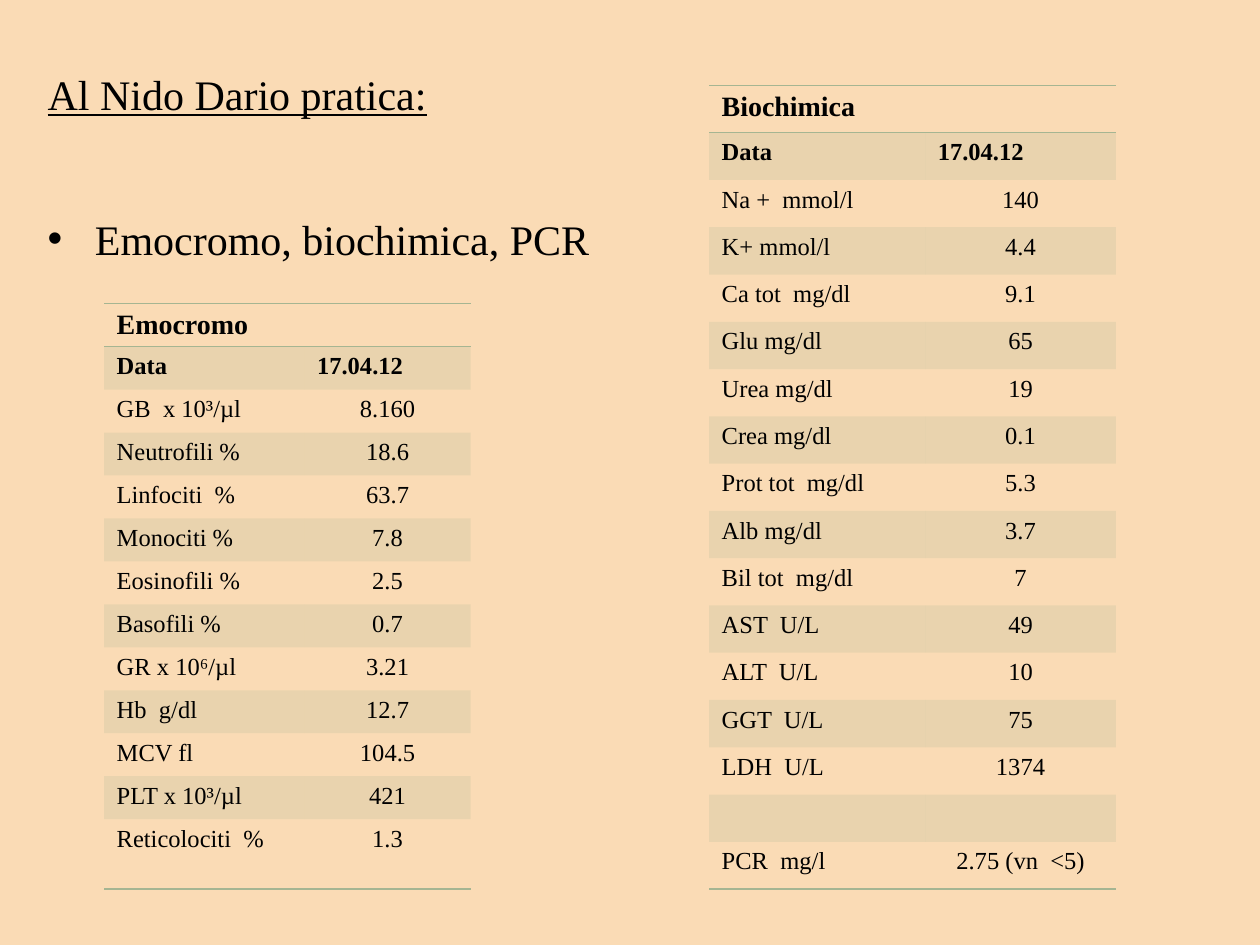
from lxml.etree import SubElement
from pptx import Presentation
from pptx.dml.color import RGBColor
from pptx.enum.text import MSO_ANCHOR, MSO_AUTO_SIZE, PP_ALIGN
from pptx.oxml.ns import qn
from pptx.util import Pt

COLORS = {"background": "FADBB5", "text": "000000", "sage": "A5B592"}
FONT = "Times New Roman"
NO_STYLE = "{2D5ABB26-0587-4C30-8999-92F81FD0307C}"
BAND_ALPHA = "20000"

EMOCROMO = [
    ("Data", "17.04.12"),
    ("GB  x 10³/µl", "8.160"),
    ("Neutrofili %", "18.6"),
    ("Linfociti  %", "63.7"),
    ("Monociti %", "7.8"),
    ("Eosinofili %", "2.5"),
    ("Basofili %", "0.7"),
    ("GR x 10⁶/µl", "3.21"),
    ("Hb  g/dl", "12.7"),
    ("MCV fl", "104.5"),
    ("PLT x 10³/µl", "421"),
    ("Reticolociti  %", "1.3"),
]
BIOCHIMICA = [
    ("Data", "17.04.12"),
    ("Na +  mmol/l", "140"),
    ("K+ mmol/l", "4.4"),
    ("Ca tot  mg/dl", "9.1"),
    ("Glu mg/dl", "65"),
    ("Urea mg/dl", "19"),
    ("Crea mg/dl", "0.1"),
    ("Prot tot  mg/dl", "5.3"),
    ("Alb mg/dl", "3.7"),
    ("Bil tot  mg/dl", "7"),
    ("AST  U/L", "49"),
    ("ALT  U/L", "10"),
    ("GGT  U/L", "75"),
    ("LDH  U/L", "1374"),
    ("", ""),
    ("PCR  mg/l", "2.75 (vn  <5)"),
]


def rgb(name):
    return RGBColor.from_string(COLORS[name])


def style_font(paragraph, size, bold=False, underline=False):
    font = paragraph.font
    font.name, font.size = FONT, Pt(size)
    font.bold, font.underline = bold, underline
    font.color.rgb = rgb("text")


def set_rules(cell, *sides):
    properties = cell._tc.get_or_add_tcPr()
    for side in sides:
        rule = SubElement(properties, qn(f"a:{side}"), w=str(Pt(1)))
        fill = SubElement(rule, qn("a:solidFill"))
        SubElement(fill, qn("a:srgbClr"), val=COLORS["sage"])


def fill_cell(cell, banded):
    if not banded:
        cell.fill.background()
        return
    cell.fill.solid()
    cell.fill.fore_color.rgb = rgb("sage")
    tint = cell._tc.tcPr.find(".//" + qn("a:solidFill") + "/" + qn("a:srgbClr"))
    SubElement(tint, qn("a:alpha"), val=BAND_ALPHA)


def write_cell(cell, text, size, bold=False, centered=False):
    cell.margin_top, cell.margin_bottom = Pt(3.6), Pt(2)
    cell.vertical_anchor = MSO_ANCHOR.TOP
    paragraph = cell.text_frame.paragraphs[0]
    paragraph.text = text
    paragraph.alignment = PP_ALIGN.CENTER if centered else PP_ALIGN.LEFT
    style_font(paragraph, size, bold)


def add_intro(slide, left, top, width, height):
    body = slide.placeholders[1]
    body.left, body.top, body.width, body.height = map(Pt, (left, top, width, height))
    frame = body.text_frame
    frame.auto_size = MSO_AUTO_SIZE.NONE
    frame.vertical_anchor = MSO_ANCHOR.TOP

    heading = frame.paragraphs[0]
    heading.text = "Al Nido Dario pratica:"
    heading.line_spacing = 1.5
    style_font(heading, 24, underline=True)
    heading_format = heading._p.get_or_add_pPr()
    heading_format.set("marL", "0")
    heading_format.set("indent", "0")
    heading_format.insert_element_before(
        heading_format.makeelement(qn("a:buNone")), "a:tabLst", "a:defRPr", "a:extLst")

    exams = frame.add_paragraph()
    exams.text = "Emocromo, biochimica, PCR"
    exams.space_before = Pt(54)
    style_font(exams, 24)
    exams_format = exams._p.get_or_add_pPr()
    exams_format.set("marL", str(Pt(27)))
    exams_format.set("indent", str(Pt(-27)))


def add_results(slide, title, results, left, top, column_widths, row_height, last_height):
    row_count = len(results) + 1
    height = row_height * (row_count - 1) + last_height
    table = slide.shapes.add_table(
        row_count, 2, Pt(left), Pt(top), Pt(sum(column_widths)), Pt(height)).table
    table.first_row = table.horz_banding = False
    table._tbl.tblPr.find(qn("a:tableStyleId")).text = NO_STYLE
    for column, width in zip(table.columns, column_widths):
        column.width = Pt(width)
    for row in table.rows:
        row.height = Pt(row_height)
    table.rows[row_count - 1].height = Pt(last_height)

    table.cell(0, 0).merge(table.cell(0, 1))
    write_cell(table.cell(0, 0), title, 16, bold=True)
    for row, result in enumerate(results, 1):
        for column, text in enumerate(result):
            is_date = row == 1
            write_cell(table.cell(row, column), text, 14, is_date,
                       centered=column == 1 and not is_date)

    for row in range(row_count):
        for column in range(2):
            cell = table.cell(row, column)
            if row == 0:
                set_rules(cell, "lnT", "lnB")
            elif row == row_count - 1:
                set_rules(cell, "lnB")
            fill_cell(cell, banded=row % 2 == 1)


def main():
    presentation = Presentation()
    presentation.slide_width, presentation.slide_height = Pt(720), Pt(540)
    slide = presentation.slides.add_slide(presentation.slide_layouts[1])
    slide.background.fill.solid()
    slide.background.fill.fore_color.rgb = rgb("background")
    title = slide.shapes.title
    title.element.getparent().remove(title.element)

    add_intro(slide, 20, 21, 686, 147.6)
    add_results(slide, "Emocromo", EMOCROMO, 59.5, 173.5, (114.5, 95), 24.55, 40)
    add_results(slide, "Biochimica", BIOCHIMICA, 405.2, 48.8, (123.5, 109), 27.02, 27.02)
    presentation.save("out.pptx")


if __name__ == "__main__":
    main()
